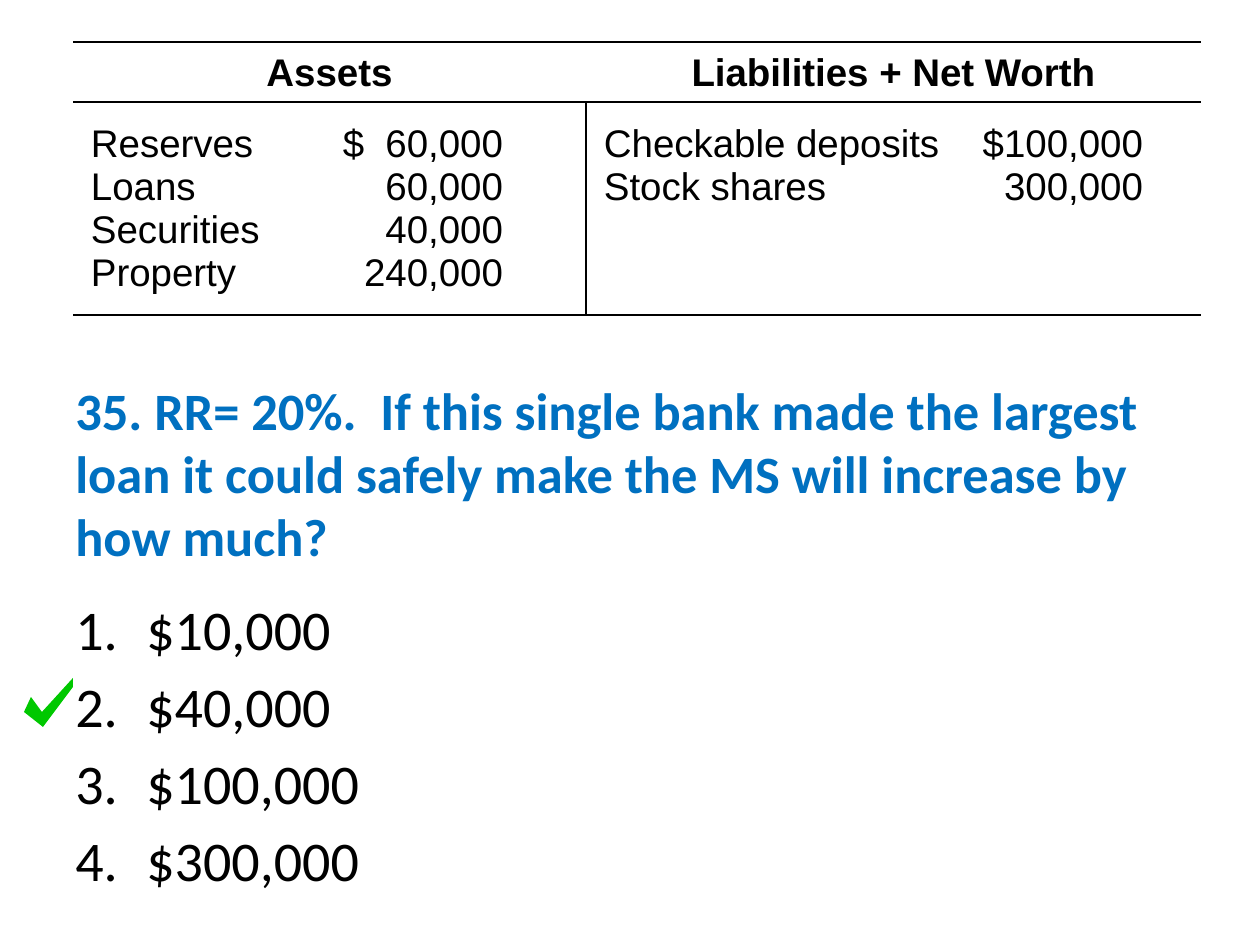
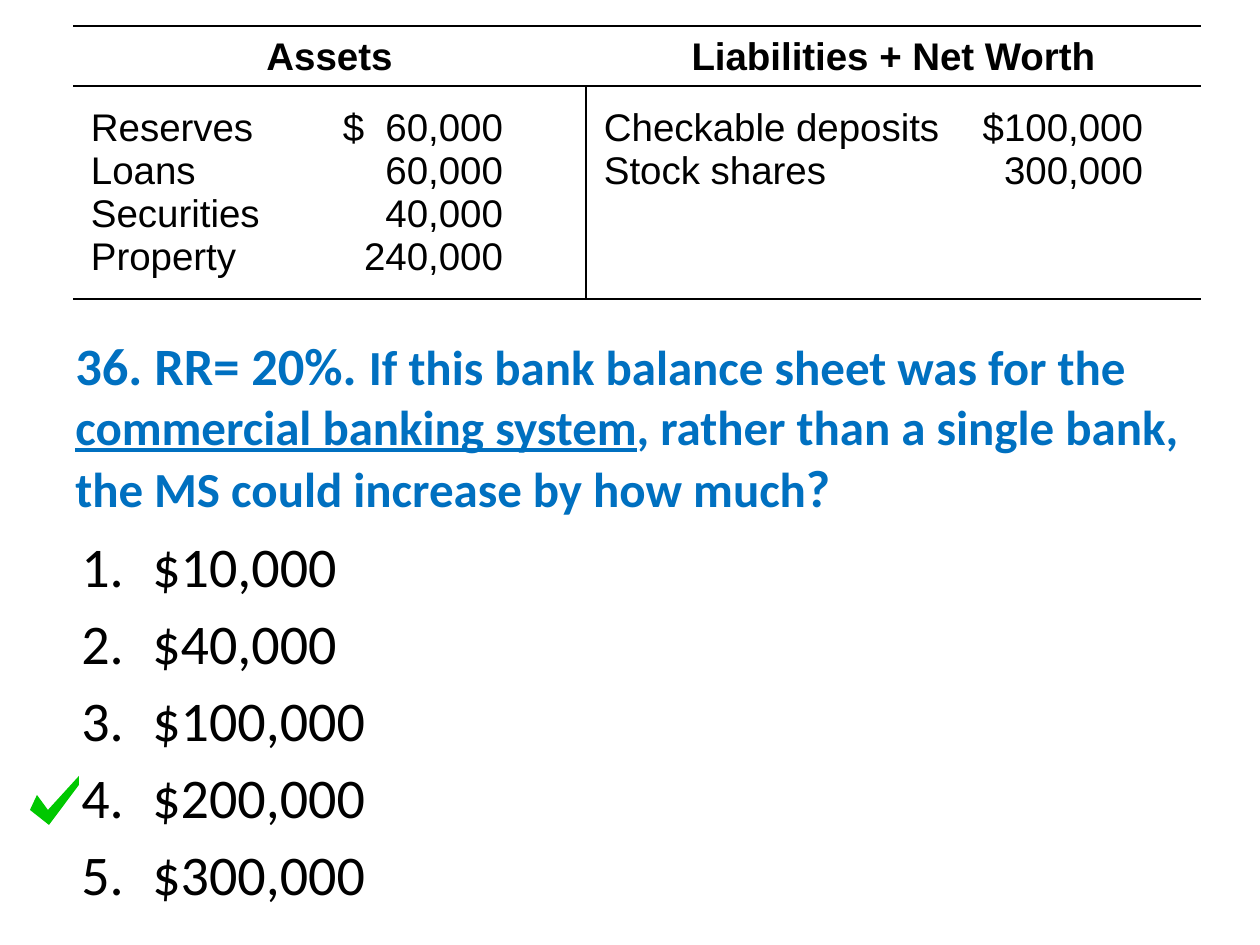
from lxml.etree import SubElement as Sub
from pptx import Presentation
from pptx.dml.color import RGBColor as Rgb
from pptx.enum.text import MSO_ANCHOR as Anchor, PP_ALIGN as Align
from pptx.oxml import parse_xml
from pptx.oxml.ns import nsdecls, qn
from pptx.util import Emu, Pt

# Content
HEADS = ["Assets", "Liabilities + Net Worth"]
SHEET = [
    [("Reserves", "$", "60,000"), ("Loans", "60,000"),
     ("Securities", "40,000"), ("Property", "240,000")],
    [("Checkable deposits", "$100,000"), ("Stock shares", "300,000")],
]
QUIZ = [
    {
        "sheet": 42,
        "ask": [("35. RR= 20%.  If this single bank made the largest loan it "
                 "could safely make the MS will increase by how much?", 30, None)],
        "ask_box": (63, 347, 1134, 252),
        "picks": ["$10,000", "$40,000", "$100,000", "$300,000"],
        "pick_box": (63, 588, 746, 315),
        "tick": 678,
    },
    {
        "sheet": 26,
        "ask": [("36. RR= 20%. ", 30, None),
                ("If this bank balance sheet was for the ", 28, None),
                ("commercial banking system", 28, True),
                (", rather than a single bank, the MS could increase by how much",
                 28, None),
                ("?", 30, None)],
        "ask_box": (63, 315, 1134, 221),
        "picks": ["$10,000", "$40,000", "$100,000", "$200,000", "$300,000"],
        "pick_box": (69, 525, 441, 388),
        "tick": 776,
    },
]

# Shared look
HUES = {"text": "000000", "ask": "0070C0", "tick": "00C800"}
LEFT, COLS, ROWS = 73, [513, 615], [60, 213]
TABS = [[(252, "l"), (412, "r")], [(539, "r")]]
TICK = [(7, 19), (0, 34), (19, 49), (49, 9), (49, 0), (18, 34)]
TICK_GAP = 39
HANG = 71
UNIT = 914400 / 126


def px(n):
    return Emu(round(n * UNIT))


def style(par, face, size, hue, bold=False):
    font = par.font
    font.name, font.bold = face, bold
    font.color.rgb = Rgb.from_string(HUES[hue])
    if size:
        font.size = Pt(size)


def add_box(slide, box):
    frame = slide.shapes.add_textbox(*map(px, box)).text_frame
    frame.word_wrap = True
    return frame


def fill_pars(frame, lines):
    """Yield one paragraph for each line."""
    for i, line in enumerate(lines):
        par = frame.add_paragraph() if i else frame.paragraphs[0]
        par.text = line
        yield par


def rule(cell, sides):
    """Draw 1 pt borders on the given sides and clear the others."""
    props = cell._tc.get_or_add_tcPr()
    for i, side in enumerate("LRTB"):
        ink = "<a:noFill/>"
        if side in sides:
            ink = f'<a:solidFill><a:srgbClr val="{HUES["text"]}"/></a:solidFill>'
        props.insert(i, parse_xml(
            f'<a:ln{side} {nsdecls("a")} w="12700">{ink}</a:ln{side}>'))


def inset(cell, left, top, low):
    cell.margin_left, cell.margin_right = px(left), 0
    cell.margin_top, cell.margin_bottom = px(top), px(low)
    cell.fill.background()


def add_sheet(slide, top):
    table = slide.shapes.add_table(
        2, 2, px(LEFT), px(top), px(sum(COLS)), px(sum(ROWS))).table
    table.first_row = table.horz_banding = False
    for col, wide in zip(table.columns, COLS):
        col.width = px(wide)
    for row, high in zip(table.rows, ROWS):
        row.height = px(high)
    for c, (head, items) in enumerate(zip(HEADS, SHEET)):
        # Heading
        cell = table.cell(0, c)
        inset(cell, 0, 10, 4)
        rule(cell, "TB")
        cell.text = head
        par = cell.text_frame.paragraphs[0]
        par.alignment = Align.CENTER
        style(par, "Arial", 22, "text", True)
        # Accounts, with amounts lined up on right tabs
        cell = table.cell(1, c)
        inset(cell, 18, 20, 8)
        rule(cell, "TB" + "RL"[c])
        pars = fill_pars(cell.text_frame, ["\t".join(item) for item in items])
        for par, item in zip(pars, items):
            stops = Sub(par._p.get_or_add_pPr(), qn("a:tabLst"))
            for spot, kind in TABS[c][1 - len(item):]:
                Sub(stops, qn("a:tab"), pos=str(px(spot)), algn=kind)
            style(par, "Arial", 22, "text")


def add_ask(slide, box, parts):
    frame = add_box(slide, box)
    frame.vertical_anchor = Anchor.MIDDLE
    par = frame.paragraphs[0]
    style(par, "Calibri", None, "ask", True)
    for text, size, under in parts:
        run = par.add_run()
        run.text = text
        run.font.size, run.font.underline = Pt(size), under


def add_picks(slide, box, picks):
    for par in fill_pars(add_box(slide, box), picks):
        props = par._p.get_or_add_pPr()
        props.set("marL", str(px(HANG)))
        props.set("indent", str(-px(HANG)))
        Sub(props, qn("a:buFont"), typeface="+mj-lt")
        Sub(props, qn("a:buAutoNum"), type="arabicPeriod")
        par.space_before = px(10)
        style(par, "Calibri", 32, "text")


def add_tick(slide, left, top):
    pen = slide.shapes.build_freeform(*TICK[0], scale=UNIT)
    pen.add_line_segments(TICK[1:], close=True)
    tick = pen.convert_to_shape(px(left), px(top))
    tick.shadow.inherit = False
    tick.fill.solid()
    tick.fill.fore_color.rgb = Rgb.from_string(HUES["tick"])
    tick.line.fill.background()


def main():
    deck = Presentation()
    deck.slide_width, deck.slide_height = px(1260), px(945)
    for quiz in QUIZ:
        slide = deck.slides.add_slide(deck.slide_layouts[6])
        add_ask(slide, quiz["ask_box"], quiz["ask"])
        add_sheet(slide, quiz["sheet"])
        add_tick(slide, quiz["pick_box"][0] - TICK_GAP, quiz["tick"])
        add_picks(slide, quiz["pick_box"], quiz["picks"])
    deck.save("out.pptx")


if __name__ == "__main__":
    main()
